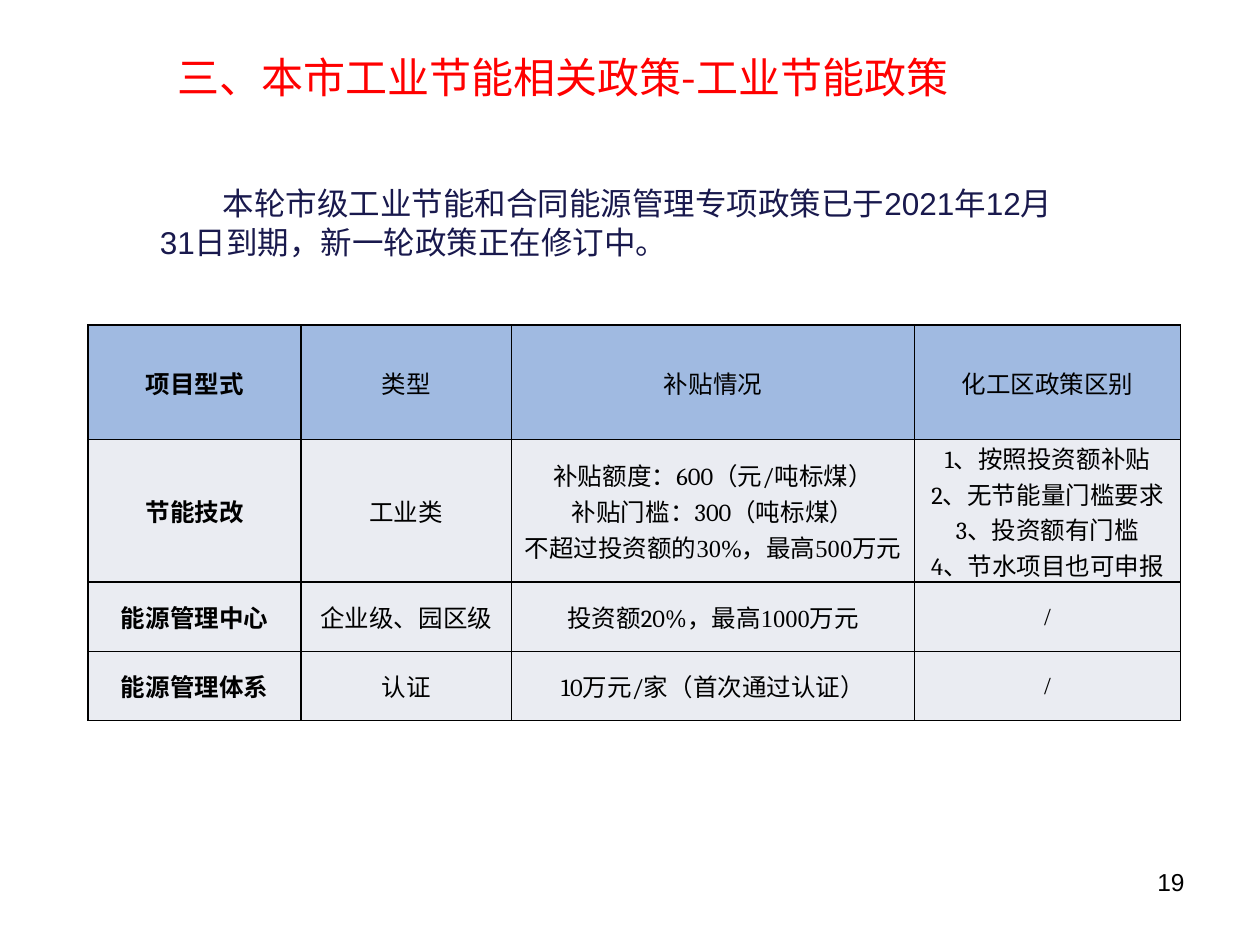
from typing import NamedTuple

from lxml import etree
from pptx import Presentation
from pptx.dml.color import RGBColor
from pptx.enum.text import MSO_ANCHOR, PP_ALIGN
from pptx.oxml.ns import qn
from pptx.util import Inches, Pt

MIDDLE = MSO_ANCHOR.MIDDLE
LEFT, CENTER, RIGHT = PP_ALIGN.LEFT, PP_ALIGN.CENTER, PP_ALIGN.RIGHT
TITLE_ONLY = 5
COLORS = {
    "black": "000000",
    "title": "FF0000",
    "body": "19194D",
    "header": "A0BAE1",
    "row": "EAECF2",
}
CHINESE = "Noto Sans CJK SC"
CAMBRIA, TIMES, ARIAL = "Cambria", "Times New Roman", "Arial"


class Span(NamedTuple):
    text: str
    font: str = CAMBRIA


class Label(NamedTuple):
    text: str
    area: tuple
    font: str
    size: int
    color: str
    align: PP_ALIGN


TITLE = Label("三、本市工业节能相关政策-工业节能政策",
              (1.31, 0, 9, 1.22), CHINESE, 24, "title", LEFT)
BODY = Label("本轮市级工业节能和合同能源管理专项政策已于2021年12月31日到期，新一轮政策正在修订中。",
             (1.17, 1.41, 7.42, 0.71), ARIAL, 18, "body", LEFT)
NUMBER = Label("19", (7.17, 6.83, 2.33, 0.52), ARIAL, 14, "black", RIGHT)

TABLE_AREA = (0.7, 2.58, 8.67, 3.14)
COLUMN_WIDTHS = (1.69, 1.67, 3.2, 2.11)
ROW_HEIGHTS = (0.91, 1.13, 0.55, 0.55)
POLICIES = [
    [[[Span("项目型式")]], [[Span("类型")]],
     [[Span("补贴情况", TIMES)]], [[Span("化工区政策区别", TIMES)]]],
    [[[Span("节能技改")]], [[Span("工业类")]],
     [[Span("补贴额度：600（元/吨标煤）")],
      [Span("补贴门槛：300（吨标煤）")],
      [Span("不超过投资额的30%，最高500万元", TIMES)]],
     [[Span("1、按照投资额补贴")], [Span("2、无节能量门槛要求")],
      [Span("3、投资额有门槛")], [Span("4、节水项目也可申报")]]],
    [[[Span("能源管理中心")]], [[Span("企业级、园区级")]],
     [[Span("投资额20%，"), Span("最高1000万元", TIMES)]],
     [[Span("/", TIMES)]]],
    [[[Span("能源管理体系")]], [[Span("认证")]],
     [[Span("10万元/家（"), Span("首次通过认证", TIMES), Span("）")]],
     [[Span("/", TIMES)]]],
]


def set_all(target, values: dict) -> None:
    for name, value in values.items():
        setattr(target, name, value)


def add_span(para, span: Span, size: int, color: str, bold: bool = False) -> None:
    run = para.add_run()
    run.text = span.text
    set_all(run.font, {"name": span.font, "size": Pt(size), "bold": bold})
    run.font.color.rgb = RGBColor.from_string(COLORS[color])
    east_asian = etree.Element(qn("a:ea"), typeface=CHINESE)
    run.font._element.find(qn("a:latin")).addnext(east_asian)


def write_label(box, label: Label):
    left, top, width, height = map(Inches, label.area)
    set_all(box, {"left": left, "top": top, "width": width, "height": height})
    box.text_frame.word_wrap = True
    para = box.text_frame.paragraphs[0]
    para.alignment = label.align
    add_span(para, Span(label.text, label.font), label.size, label.color)
    return para


def add_label(page, label: Label):
    box = page.shapes.add_textbox(*map(Inches, label.area))
    return write_label(box, label)


def draw_borders(cell) -> None:
    properties = cell._tc.get_or_add_tcPr()
    for position, side in enumerate(("lnL", "lnR", "lnT", "lnB")):
        line = etree.Element(qn(f"a:{side}"), w=str(Pt(1)))
        fill = etree.SubElement(line, qn("a:solidFill"))
        etree.SubElement(fill, qn("a:srgbClr"), val=COLORS["black"])
        properties.insert(position, line)


def fill_cell(cell, paragraphs: list, color: str, bold: bool) -> None:
    set_all(cell, {
        "margin_left": Inches(0.07), "margin_right": Inches(0.07),
        "margin_top": 0, "margin_bottom": 0, "vertical_anchor": MIDDLE,
    })
    cell.fill.solid()
    cell.fill.fore_color.rgb = RGBColor.from_string(COLORS[color])
    draw_borders(cell)
    frame = cell.text_frame
    for index, spans in enumerate(paragraphs):
        para = frame.add_paragraph() if index else frame.paragraphs[0]
        para.alignment = CENTER
        for span in spans:
            add_span(para, span, 14, "black", bold)


def add_policy_table(page) -> None:
    table = page.shapes.add_table(
        len(ROW_HEIGHTS), len(COLUMN_WIDTHS), *map(Inches, TABLE_AREA)).table
    for column, width in zip(table.columns, COLUMN_WIDTHS):
        column.width = Inches(width)
    for row, height in zip(table.rows, ROW_HEIGHTS):
        row.height = Inches(height)
    for row_index, policy in enumerate(POLICIES):
        color = "row" if row_index else "header"
        for column_index, paragraphs in enumerate(policy):
            fill_cell(table.cell(row_index, column_index), paragraphs,
                      color, column_index == 0)


def main() -> None:
    deck = Presentation()
    set_all(deck, {"slide_width": Inches(10), "slide_height": Inches(7.5)})
    page = deck.slides.add_slide(deck.slide_layouts[TITLE_ONLY])

    add_label(page, NUMBER)
    add_policy_table(page)
    title = page.shapes.title
    write_label(title, TITLE)
    title.text_frame.vertical_anchor = MIDDLE
    body = add_label(page, BODY)
    body.line_spacing = Pt(22)
    body._p.get_or_add_pPr().set("indent", str(Inches(0.5)))

    deck.save("out.pptx")


if __name__ == "__main__":
    main()
